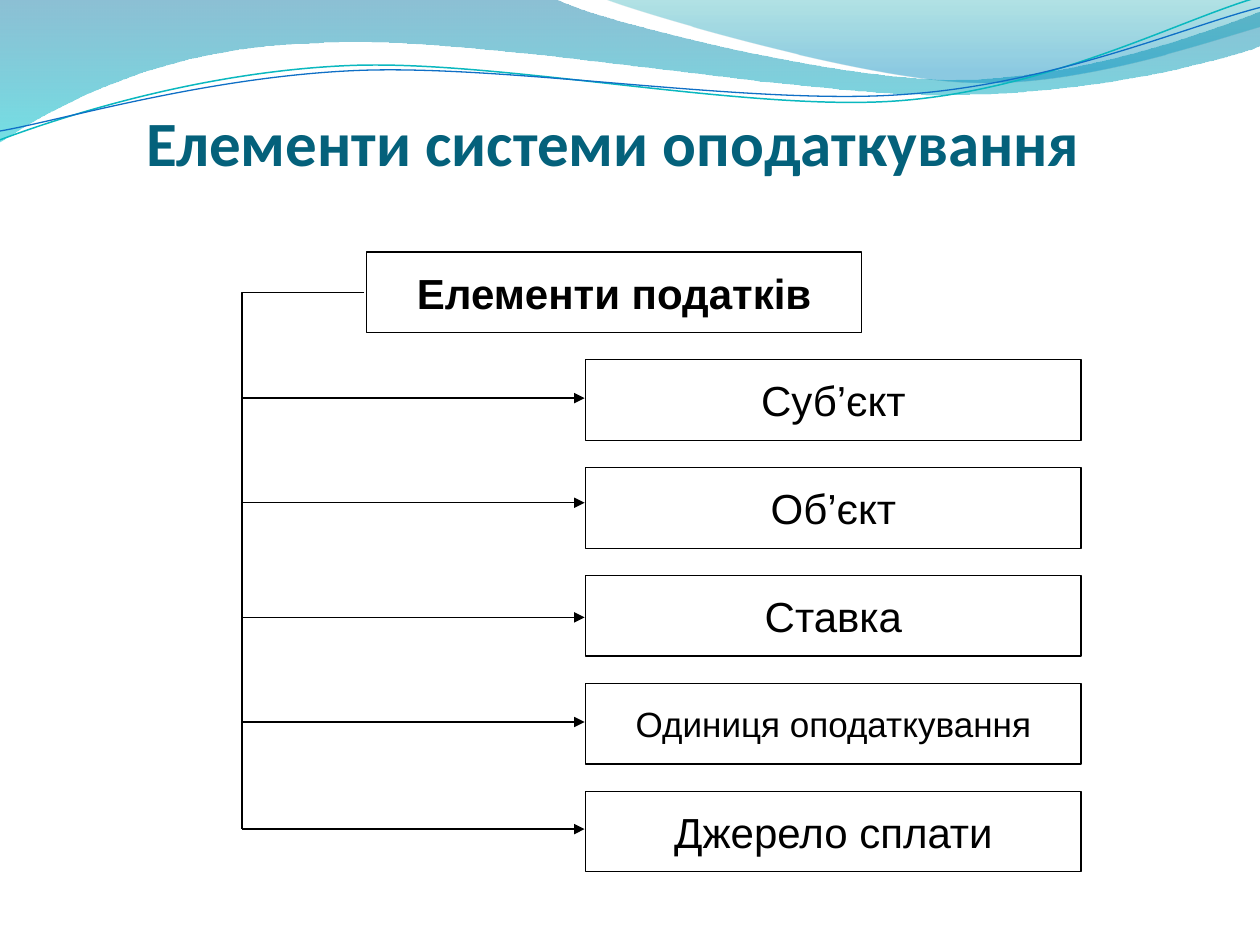
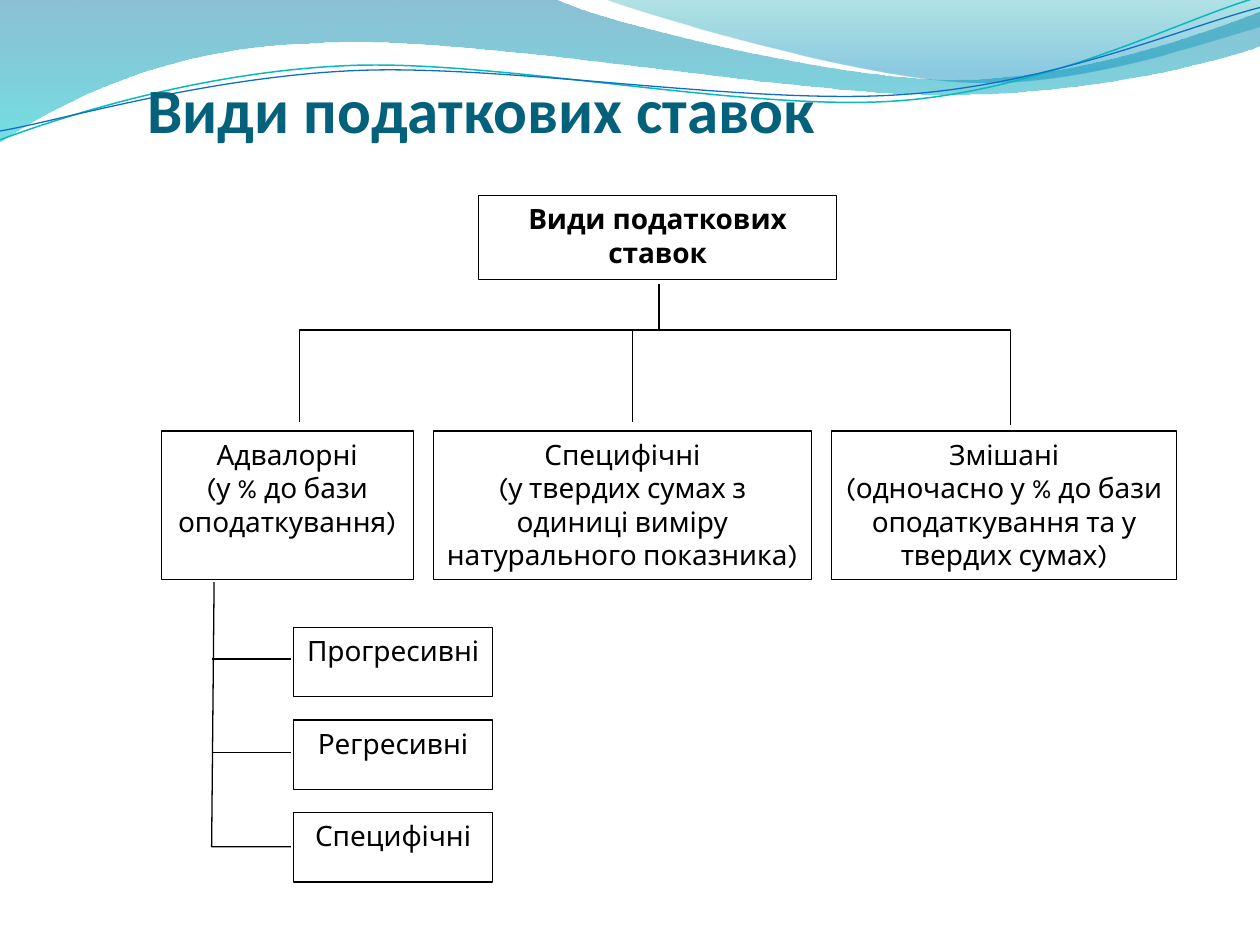
from dataclasses import dataclass
from math import cos, radians, sin

from lxml import etree
from pptx import Presentation
from pptx.dml.color import RGBColor
from pptx.enum.shapes import MSO_CONNECTOR, MSO_SHAPE
from pptx.enum.text import MSO_ANCHOR, MSO_AUTO_SIZE, PP_ALIGN
from pptx.oxml.ns import qn
from pptx.util import Inches, Pt

STRAIGHT = MSO_CONNECTOR.STRAIGHT
RECTANGLE = MSO_SHAPE.RECTANGLE
TOP, MIDDLE, BOTTOM = MSO_ANCHOR.TOP, MSO_ANCHOR.MIDDLE, MSO_ANCHOR.BOTTOM
LEFT, CENTER = PP_ALIGN.LEFT, PP_ALIGN.CENTER
TITLE_ONLY = 5


@dataclass(frozen=True)
class Theme:
    title_font: str = "Calibri"
    elements_font: str = "Arial"
    rates_font: str = "Karla"
    title_size: int = 36
    elements_size: int = 24
    long_label_size: int = 20
    rates_size: int = 16
    title_color: str = "04617B"
    ink: str = "000000"
    line_width: float = 0.75


THEME = Theme()

# Curved outlines: two numbers make a straight segment, six a Bezier curve.
# Gradient stops: position, colour, opacity in percent.
WAVE_BANDS = [
    {"start": (0, 0),
     "segments": [
         (4.4, -0.01), (4.76, 0.17, 6.64, 0.63, 7.58, 0.63),
         (8.53, 0.63, 9.58, 0.26, 10, 0.09), (10.01, 0.36),
         (9.83, 0.44, 8.7, 0.76, 7.46, 0.75),
         (6.22, 0.75, 3.82, 0.28, 2.57, 0.34),
         (1.29, 0.36, 0.46, 0.83, -0.01, 1.13), (0, 0)],
     "stops": [(0, "0074A1", 45), (1, "00C6CF", 55)]},
    {"start": (4.79, -0.01),
     "segments": [
         (5.09, 0.11, 6.82, 0.62, 7.69, 0.65),
         (8.56, 0.69, 9.61, 0.32, 10, 0.21), (10, 0), (4.79, -0.01)],
     "stops": [(0, "00A1A9", 30), (0.8, "008BBF", 45)]},
]
WAVE_LINES = [
    {"start": (0, 1.11),
     "segments": [
         (0.48, 0.93, 1.58, 0.57, 2.77, 0.52),
         (3.95, 0.47, 5.93, 0.89, 7.13, 0.8),
         (8.33, 0.71, 9.38, 0.15, 9.98, -0.02)],
     "center": (4.99, 0.58), "color": "0AB8BF", "width": 0.85},
    {"start": (0, 1.04),
     "segments": [
         (0.47, 0.96, 1.64, 0.61, 2.83, 0.56),
         (4.03, 0.51, 5.97, 0.84, 7.17, 0.75),
         (8.36, 0.67, 9.41, 0.21, 10, 0.06)],
     "center": (5, 0.59), "color": "0F6FC6", "width": 0.75},
]
WAVE_TILT = -2.7

ELEMENTS_TITLE = "Елементи системи оподаткування"
ELEMENTS_HEAD = "Елементи податків"
# Label, height of its arrow, type size
ELEMENTS = [
    ("Суб’єкт", 3.16, THEME.elements_size),
    ("Об’єкт", 3.99, THEME.elements_size),
    ("Ставка", 4.9, THEME.elements_size),
    ("Одиниця оподаткування", 5.73, THEME.long_label_size),
    ("Джерело сплати", 6.58, THEME.elements_size),
]

RATES_TITLE = "Види податкових ставок"
RATES_HEAD = "Види податкових ставок"
# Left, width, paragraphs
RATE_KINDS = [
    (1.28, 2, ["Адвалорні", "(у % до бази оподаткування)"]),
    (3.44, 3, ["Специфічні",
               "(у твердих сумах з одиниці виміру натурального показника)"]),
    (6.6, 2.74, ["Змішані",
                 "(одночасно у % до бази оподаткування та у твердих сумах)"]),
]
AD_VALOREM_KINDS = ["Прогресивні", "Регресивні", "Специфічні"]


def write_text(shape, paragraphs, *, font, size, color=THEME.ink, bold=False,
               align=CENTER, anchor=MIDDLE):
    frame = shape.text_frame
    frame.word_wrap = True
    frame.auto_size = MSO_AUTO_SIZE.NONE
    frame.vertical_anchor = anchor
    frame.text = "\n".join(paragraphs)
    for paragraph in frame.paragraphs:
        paragraph.alignment = align
        paragraph.font.name = font
        paragraph.font.size = Pt(size)
        paragraph.font.bold = bold
        paragraph.font.color.rgb = RGBColor.from_string(color)


def style_line(shape, color=THEME.ink, width=THEME.line_width):
    shape.line.color.rgb = RGBColor.from_string(color)
    shape.line.width = Pt(width)


def add_box(slide, paragraphs, left, top, width, height, **text_format):
    box = slide.shapes.add_shape(
        RECTANGLE, Inches(left), Inches(top), Inches(width), Inches(height))
    box.shadow.inherit = False
    box.fill.background()
    style_line(box)
    write_text(box, paragraphs, **text_format)


def add_line(slide, start, end, arrow=False):
    connector = slide.shapes.add_connector(
        STRAIGHT, *(Inches(value) for value in start + end))
    style_line(connector)
    if arrow:
        etree.SubElement(connector.line._get_or_add_ln(), qn("a:tailEnd"),
                         type="triangle")
    etree.SubElement(connector._element.spPr, qn("a:effectLst"))


def add_outline(slide, points, close=False):
    """Add an unfilled freeform in ink through points given in inches."""
    start, *rest = [(Inches(x), Inches(y)) for x, y in points]
    builder = slide.shapes.build_freeform(*start)
    builder.add_line_segments(rest, close=close)
    shape = builder.convert_to_shape()
    shape.shadow.inherit = False
    shape.fill.background()
    style_line(shape)
    return shape


def rotate(point, center, degrees):
    angle = radians(degrees)
    dx, dy = point[0] - center[0], point[1] - center[1]
    return (center[0] + dx * cos(angle) - dy * sin(angle),
            center[1] + dx * sin(angle) + dy * cos(angle))


def add_curve(slide, start, segments, close=False, center=(0, 0), tilt=0):
    """Add a freeform whose six-number segments are Bezier curves."""
    points = [start]
    for segment in segments:
        points += zip(segment[::2], segment[1::2])
    shape = add_outline(
        slide, [rotate(point, center, -tilt) for point in points], close)
    shape.rotation = tilt
    outline = next(shape._element.iter(qn("a:path")))
    lines = iter(outline.findall(qn("a:lnTo")))
    for segment in segments:
        parts = [next(lines) for _ in segment[::2]]
        if len(parts) == 1:
            continue
        curve = etree.Element(qn("a:cubicBezTo"))
        parts[0].addprevious(curve)
        for line in parts:
            curve.append(line[0])
            outline.remove(line)
    return shape


def fill_gradient(shape, stops):
    shape.fill.gradient()
    shape.fill.gradient_angle = 270
    for stop, (position, color, _) in zip(shape.fill.gradient_stops, stops):
        stop.position = position
        stop.color.rgb = RGBColor.from_string(color)
    gradient = shape._element.spPr.find(qn("a:gradFill"))
    colors = list(gradient.iter(qn("a:srgbClr")))
    for element, (_, _, opacity) in zip(colors, stops):
        etree.SubElement(element, qn("a:alpha"), val=str(opacity * 1000))


def add_waves_to_master(presentation, slide):
    """Draw the waves on a slide, then move them to the master."""
    waves = []
    for band in WAVE_BANDS:
        shape = add_curve(slide, band["start"], band["segments"], close=True)
        fill_gradient(shape, band["stops"])
        shape.line.fill.background()
        waves.append(shape)
    for wave in WAVE_LINES:
        shape = add_curve(slide, wave["start"], wave["segments"],
                          center=wave["center"], tilt=WAVE_TILT)
        style_line(shape, wave["color"], wave["width"])
        waves.append(shape)
    for shape in waves:
        presentation.slide_master.shapes._spTree.append(shape._element)


def add_titled_slide(presentation, text, left, top, width, height):
    slide = presentation.slides.add_slide(
        presentation.slide_layouts[TITLE_ONLY])
    title = slide.shapes.title
    title.left, title.top = Inches(left), Inches(top)
    title.width, title.height = Inches(width), Inches(height)
    frame = title.text_frame
    frame.margin_left = frame.margin_right = frame.margin_bottom = 0
    frame.margin_top = Inches(0.05)
    write_text(title, [text], font=THEME.title_font, size=THEME.title_size,
               color=THEME.title_color, bold=True, align=LEFT, anchor=BOTTOM)
    return slide


def build_elements_slide(presentation):
    slide = add_titled_slide(presentation, ELEMENTS_TITLE,
                             1.16, 0.33, 8.18, 1.09)
    trunk_x, head_top, last_top = 1.92, 2, 6.28
    pitch = (last_top - head_top) / len(ELEMENTS)
    box_size = (3.93, 0.64)
    add_outline(slide, [(2.89, 2.32), (trunk_x, 2.32),
                        (trunk_x, ELEMENTS[-1][1])])
    add_box(slide, [ELEMENTS_HEAD], 2.91, head_top, *box_size, bold=True,
            font=THEME.elements_font, size=THEME.elements_size)
    for row, (label, arrow_y, size) in enumerate(ELEMENTS, start=1):
        add_line(slide, (trunk_x, arrow_y), (4.64, arrow_y), arrow=True)
        add_box(slide, [label], 4.65, head_top + row * pitch, *box_size,
                font=THEME.elements_font, size=size)
    return slide


def build_rates_slide(presentation):
    slide = add_titled_slide(presentation, RATES_TITLE, 1.17, 0.3, 8.33, 0.86)
    text_format = {"font": THEME.rates_font, "size": THEME.rates_size,
                   "anchor": TOP}
    add_box(slide, [RATES_HEAD], 3.8, 1.55, 2.84, 0.67, bold=True,
            **text_format)
    for left, width, paragraphs in RATE_KINDS:
        add_box(slide, paragraphs, left, 3.42, width, 1.18, **text_format)

    fork_y = 2.62
    add_outline(slide, [(2.38, 3.35), (2.38, fork_y),
                        (8.02, fork_y), (8.02, 3.37)])
    add_line(slide, (5.23, 2.25), (5.23, fork_y))
    add_line(slide, (5.02, fork_y), (5.02, 3.35))

    trunk_x, branch_end = 1.68, 2.31
    first_branch, last_branch = 5.23, 6.72
    first_top, last_top = 4.98, 6.45
    gaps = len(AD_VALOREM_KINDS) - 1
    add_outline(slide, [(1.7, 4.62), (trunk_x, last_branch),
                        (branch_end, last_branch)])
    for row, label in enumerate(AD_VALOREM_KINDS):
        top = first_top + row * (last_top - first_top) / gaps
        add_box(slide, [label], 2.33, top, 1.58, 0.55, **text_format)
        if row < gaps:
            branch_y = first_branch + row * (last_branch - first_branch) / gaps
            add_line(slide, (trunk_x, branch_y), (branch_end, branch_y))


def main():
    presentation = Presentation()
    presentation.slide_width = Inches(10)
    presentation.slide_height = Inches(7.5)
    elements_slide = build_elements_slide(presentation)
    add_waves_to_master(presentation, elements_slide)
    build_rates_slide(presentation)
    presentation.save("out.pptx")


if __name__ == "__main__":
    main()
